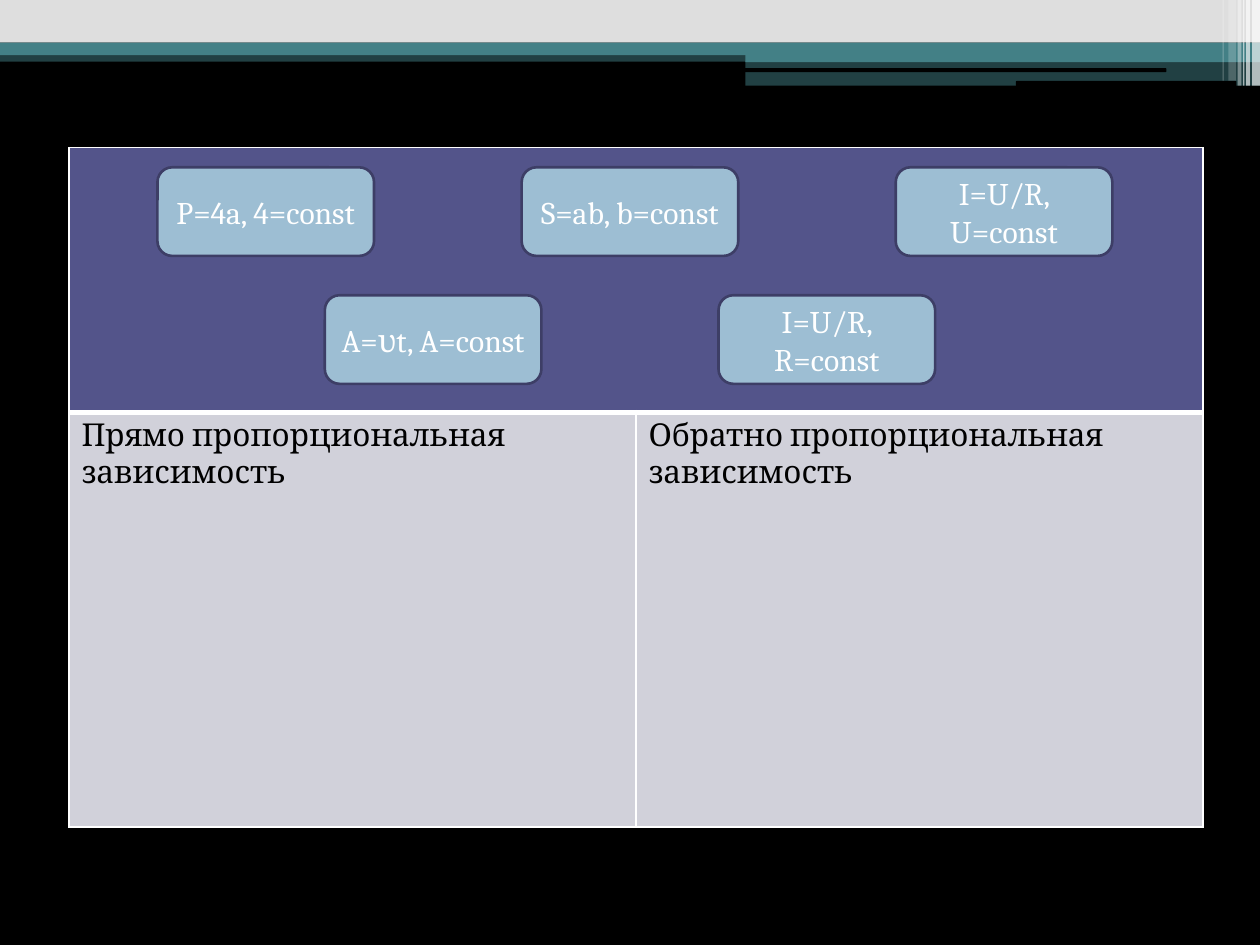
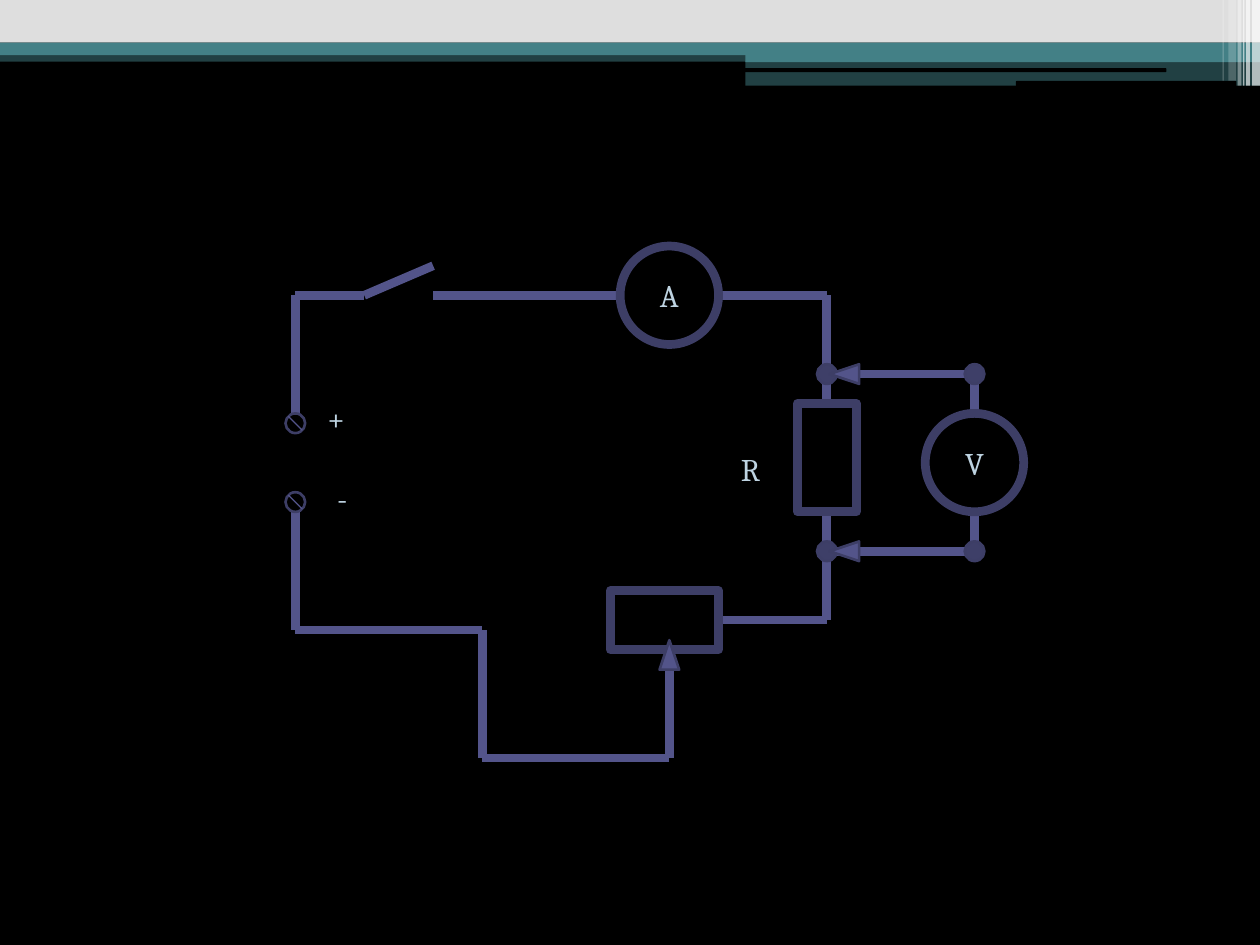
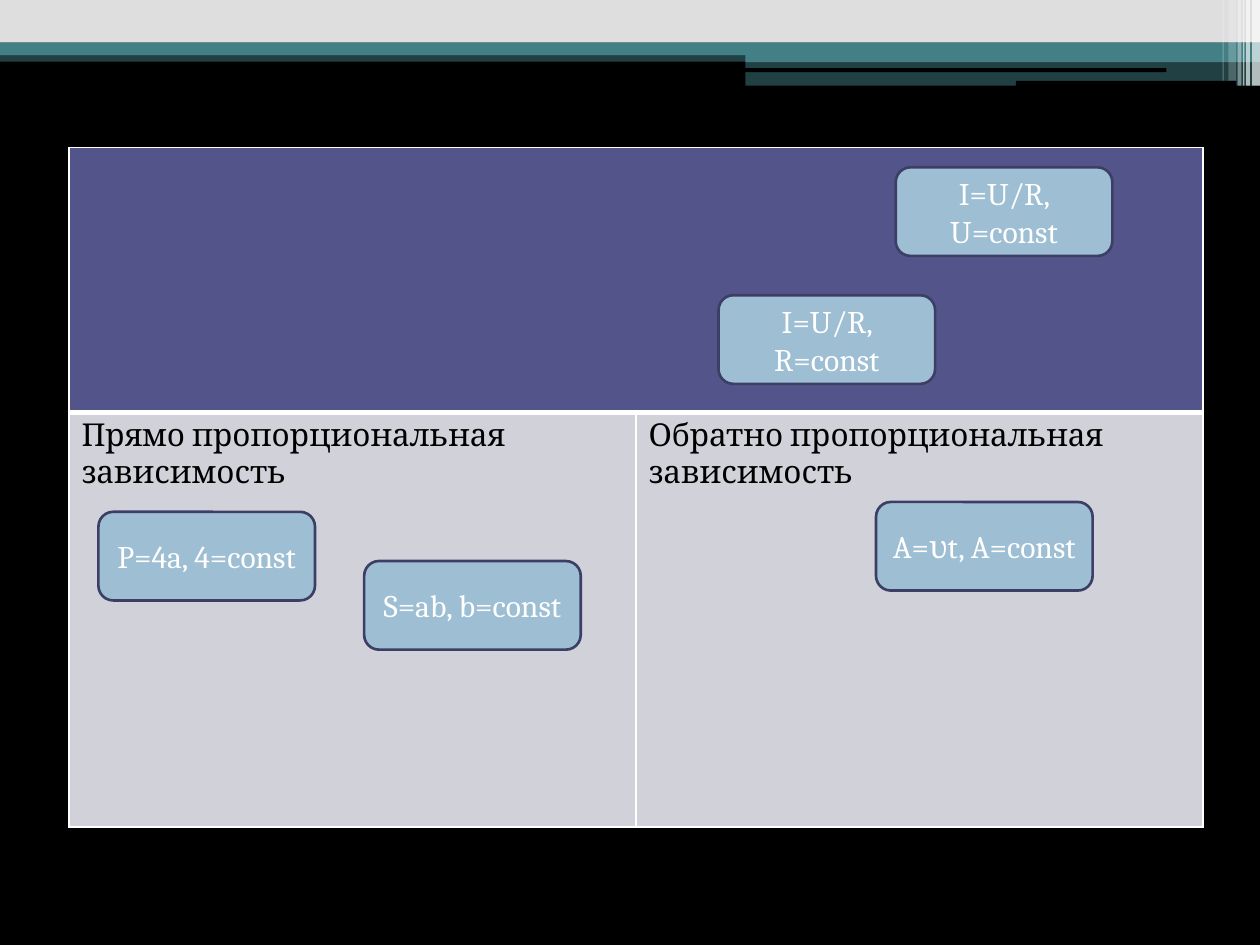
from pptx import Presentation
from pptx.dml.color import RGBColor
from pptx.enum.shapes import MSO_CONNECTOR, MSO_SHAPE
from pptx.enum.text import MSO_ANCHOR, MSO_AUTO_SIZE, PP_ALIGN
from pptx.oxml.ns import qn
from pptx.util import Pt
from lxml.etree import SubElement

COLORS = {
    "black": "000000", "white": "FFFFFF", "grey": "DEDEDE", "teal": "438086",
    "violet": "53548A", "outline": "3D3E66", "dot": "3E3F68",
    "card": "9DBED3", "cell": "D1D1DA", "label": "BED3E1",
}
FONT = "Cambria"
FONT_SIZE = 18
PAGE_WIDTH, PAGE_HEIGHT = 720, 540
TABLE_BOX = (39.38, 84.38, 648, 388.12)
HEADER_HEIGHT = 151.2
CARD_SIZE = (123.75, 50.62)
CIRCUIT_ORIGIN = (168.75, 168.75)

HEADINGS = ["Прямо пропорциональная зависимость", "Обратно пропорциональная зависимость"]
PERIMETER, AREA = "P=4a, 4=const", "S=ab, b=const"
WORK, FIXED_U, FIXED_R = "A=υt, A=const", "I=U/R, U=const", "I=U/R, R=const"
UPPER_ROW, LOWER_ROW = 11.25, 84.38
UNSORTED_CARDS = [
    (PERIMETER, 50.62, UPPER_ROW), (WORK, 146.25, LOWER_ROW), (FIXED_U, 472.5, UPPER_ROW),
    (AREA, 258.75, UPPER_ROW), (FIXED_R, 371.25, LOWER_ROW),
]
SORTED_CARDS = [
    (PERIMETER, 16.88, 208.12), (WORK, 461.25, 202.5), (AREA, 168.75, 236.25),
    (FIXED_R, 371.25, LOWER_ROW), (FIXED_U, 472.5, UPPER_ROW),
]


def color(name):
    """Return the named palette colour."""
    return RGBColor.from_string(COLORS[name])


def write(frame, text, ink, align=PP_ALIGN.LEFT):
    """Put one styled paragraph into a text frame."""
    frame.word_wrap = True
    frame.text = text
    para = frame.paragraphs[0]
    para.alignment = align
    para.font.name = FONT
    para.font.size = Pt(FONT_SIZE)
    para.font.color.rgb = color(ink)


def add_box(page, kind, left, top, width, height, fill=None, line=None, weight=1.5, alpha=100):
    """Add a preset shape with an optional fill and outline."""
    box = page.shapes.add_shape(kind, Pt(left), Pt(top), Pt(width), Pt(height))
    box.shadow.inherit = False
    if fill:
        box.fill.solid()
        box.fill.fore_color.rgb = color(fill)
        if alpha < 100:
            tint = box.fill._xPr.find(qn("a:solidFill"))[0]
            SubElement(tint, qn("a:alpha"), val=str(alpha * 1000))
    else:
        box.fill.background()
    if line:
        box.line.color.rgb = color(line)
        box.line.width = Pt(weight)
    else:
        box.line.fill.background()
    return box


def add_centred(page, kind, x, y, width, height, **style):
    """Add a preset shape around a centre point."""
    return add_box(page, kind, x - width / 2, y - height / 2, width, height, **style)


def label_box(box, text, ink):
    """Centre a label inside a shape."""
    box.text_frame.vertical_anchor = MSO_ANCHOR.MIDDLE
    write(box.text_frame, text, ink, PP_ALIGN.CENTER)


def add_bands(page, width):
    """Draw the top bands and the stripes at the right edge."""
    half = width - 294
    rectangle, rounded = MSO_SHAPE.RECTANGLE, MSO_SHAPE.ROUNDED_RECTANGLE
    bands = [
        (rectangle, 0, 28.8, width, 6.5, "teal", 50),
        (rectangle, 0, 0, width, 24.4, "grey", 100),
        (rectangle, 0, 24.4, width, 7.1, "teal", 100),
        (rectangle, half, 28.4, 294, 7.1, "teal", 100),
        (rectangle, half, 34.7, 294, 14.2, "teal", 50),
        (rounded, half - 0.5, 39, 241, 2.2, "black", 100),
        (rounded, 580.5, 46.3, 126, 2.9, "black", 100),
    ]
    stripes = [(4.5, 4.5, 49, 65), (7.9, 2.2, 49, 65), (9.6, 0.7, 49, 60),
               (12.8, 2.2, 49, 40), (18, 4.3, 46.1, 20), (21.4, 0.7, 46.1, 30)]
    bands += [(rectangle, width - inset, 0, breadth, height, "white", alpha)
              for inset, breadth, height, alpha in stripes]
    return [add_box(page, kind, left, top, breadth, height, fill=fill, alpha=alpha)
            for kind, left, top, breadth, height, fill, alpha in bands]


def dress_master(deck, page):
    """Move the bands to the master so that every slide shares them."""
    master = deck.slide_master
    master.background.fill.solid()
    master.background.fill.fore_color.rgb = color("black")
    for number, band in enumerate(add_bands(page, PAGE_WIDTH), start=100):
        band.element.nvSpPr.cNvPr.id = number
        master.shapes.element.append(band.element)


def style_cell(cell, fill, top, bottom):
    """Set a cell's white borders and its fill."""
    properties = cell._tc.get_or_add_tcPr()
    for side, weight in (("L", 1), ("R", 1), ("T", top), ("B", bottom)):
        border = SubElement(properties, qn(f"a:ln{side}"), w=str(Pt(weight)))
        paint = SubElement(border, qn("a:solidFill"))
        SubElement(paint, qn("a:srgbClr"), val=COLORS["white"])
    cell.fill.solid()
    cell.fill.fore_color.rgb = color(fill)


def add_sorting_table(page, left, top, width, height):
    """Add the table with a merged header above two columns."""
    table = page.shapes.add_table(2, 2, Pt(left), Pt(top), Pt(width), Pt(height)).table
    table.rows[0].height = Pt(HEADER_HEIGHT)
    table.rows[1].height = Pt(height - HEADER_HEIGHT)
    for column, heading in enumerate(HEADINGS):
        table.columns[column].width = Pt(width / 2)
        style_cell(table.cell(0, column), "violet", 1, 3)
        style_cell(table.cell(1, column), "cell", 3, 1)
        write(table.cell(1, column).text_frame, heading, "black")
    table.cell(0, 0).merge(table.cell(0, 1))


def build_sorting_slide(page, cards, box):
    """Build a sorting table with formula cards placed over it."""
    left, top, width, height = box
    add_sorting_table(page, left, top, width, height)
    for formula, x, y in cards:
        card = add_box(page, MSO_SHAPE.ROUNDED_RECTANGLE, left + x, top + y, *CARD_SIZE,
                       fill="card", line="outline")
        label_box(card, formula, "white")


def add_wire(page, start, end, weight=5):
    """Add a straight wire between two points."""
    wire = page.shapes.add_connector(
        MSO_CONNECTOR.STRAIGHT, *(Pt(value) for value in (*start, *end)))
    wire.line.color.rgb = color("violet")
    wire.line.width = Pt(weight)
    SubElement(wire._element.spPr, qn("a:effectLst"))
    return wire


def add_meter(page, x, y, letter):
    """Add a round measuring device with its letter."""
    meter = add_centred(page, MSO_SHAPE.OVAL, x, y, 56.25, 56.25, line="outline", weight=5)
    label_box(meter, letter, "label")


def add_arrowhead(page, x, y, rotation=0):
    """Add a small triangle that ends a wire."""
    head = add_centred(page, MSO_SHAPE.ISOSCELES_TRIANGLE, x, y, 11.25, 16.88,
                       fill="violet", line="outline")
    head.rotation = rotation


def add_terminal(page, x, y):
    """Add a battery terminal crossed by a thin slash."""
    add_centred(page, MSO_SHAPE.OVAL, x, y, 11.25, 11.25, line="outline")
    add_wire(page, (x - 4, y - 4), (x + 4, y + 4), 0.75)


def add_sign(page, text, left, top, width):
    """Add a free-standing circuit label."""
    frame = page.shapes.add_textbox(Pt(left), Pt(top), Pt(width), Pt(28.8)).text_frame
    frame.auto_size = MSO_AUTO_SIZE.SHAPE_TO_FIT_TEXT
    write(frame, text, "label")


def build_circuit_slide(page, left, top):
    """Build the circuit diagram from its upper left corner."""
    step, slider, load, meter = (left + x for x in (106.88, 213.75, 303.75, 388.12))
    hinge, contact = left + 39.38, left + 78.75
    high_tap, low_tap, rheostat_y = top + 45, top + 146.25, top + 185.63
    plus_y, minus_y = top + 73.12, top + 118.12
    lower, base = top + 191.25, top + 264.38
    load_y, meter_y = top + 92.81, (high_tap + low_tap) / 2
    radius, terminal = 28.12, 5.62
    load_top, load_bottom = load_y - 30.94, load_y + 30.94
    rheostat_right = left + 241.88

    routes = [
        [(contact, top), (slider - radius, top)],
        [(slider + radius, top), (load, top)],
        [(left, plus_y - terminal), (left, top), (hinge, top), (contact, top - 16.88)],
        [(left, minus_y + terminal), (left, lower), (step, lower), (step, base),
         (slider, base), (slider, top + 202.5)],
        [(meter, meter_y - radius), (meter, high_tap), (load, high_tap)],
        [(meter, meter_y + radius), (meter, low_tap), (load, low_tap)],
    ]
    for route in routes:
        for start, end in zip(route, route[1:]):
            add_wire(page, start, end)
    feed = add_wire(page, (load, top), (load, load_top))
    drop = add_wire(page, (load, load_bottom), (load, rheostat_y))
    branch = add_wire(page, (rheostat_right, rheostat_y), (load, rheostat_y))

    resistor = add_centred(page, MSO_SHAPE.RECTANGLE, load, load_y, 33.75, 61.88,
                           line="outline", weight=5)
    rheostat = add_centred(page, MSO_SHAPE.RECTANGLE, rheostat_right - 30.94, rheostat_y,
                           61.88, 33.75, line="outline", weight=5)
    feed.end_connect(resistor, 0)
    drop.begin_connect(resistor, 2)
    branch.begin_connect(rheostat, 3)

    add_meter(page, slider, top, "A")
    add_meter(page, meter, meter_y, "V")
    for y in (plus_y, minus_y):
        add_terminal(page, left, y)
    for y in (high_tap, low_tap):
        for x in (load, meter):
            add_centred(page, MSO_SHAPE.OVAL, x, y, 11.25, 11.25, fill="dot", line="outline")
        add_arrowhead(page, load + 10, y, 270)
    add_arrowhead(page, slider, top + 205.5)
    add_sign(page, "R", left + 247.5, top + 84.7, 33.75)
    add_sign(page, "+", left + 11.25, top + 55.9, 33.75)
    add_sign(page, "-", left + 16.88, top + 101.25, 22.5)


def main():
    """Build the three slides and save the deck."""
    deck = Presentation()
    deck.slide_width, deck.slide_height = Pt(PAGE_WIDTH), Pt(PAGE_HEIGHT)
    first, second, third = (deck.slides.add_slide(deck.slide_layouts[6]) for _ in range(3))
    dress_master(deck, first)
    build_sorting_slide(first, UNSORTED_CARDS, TABLE_BOX)
    build_circuit_slide(second, *CIRCUIT_ORIGIN)
    build_sorting_slide(third, SORTED_CARDS, TABLE_BOX)
    deck.save("out.pptx")


if __name__ == "__main__":
    main()
